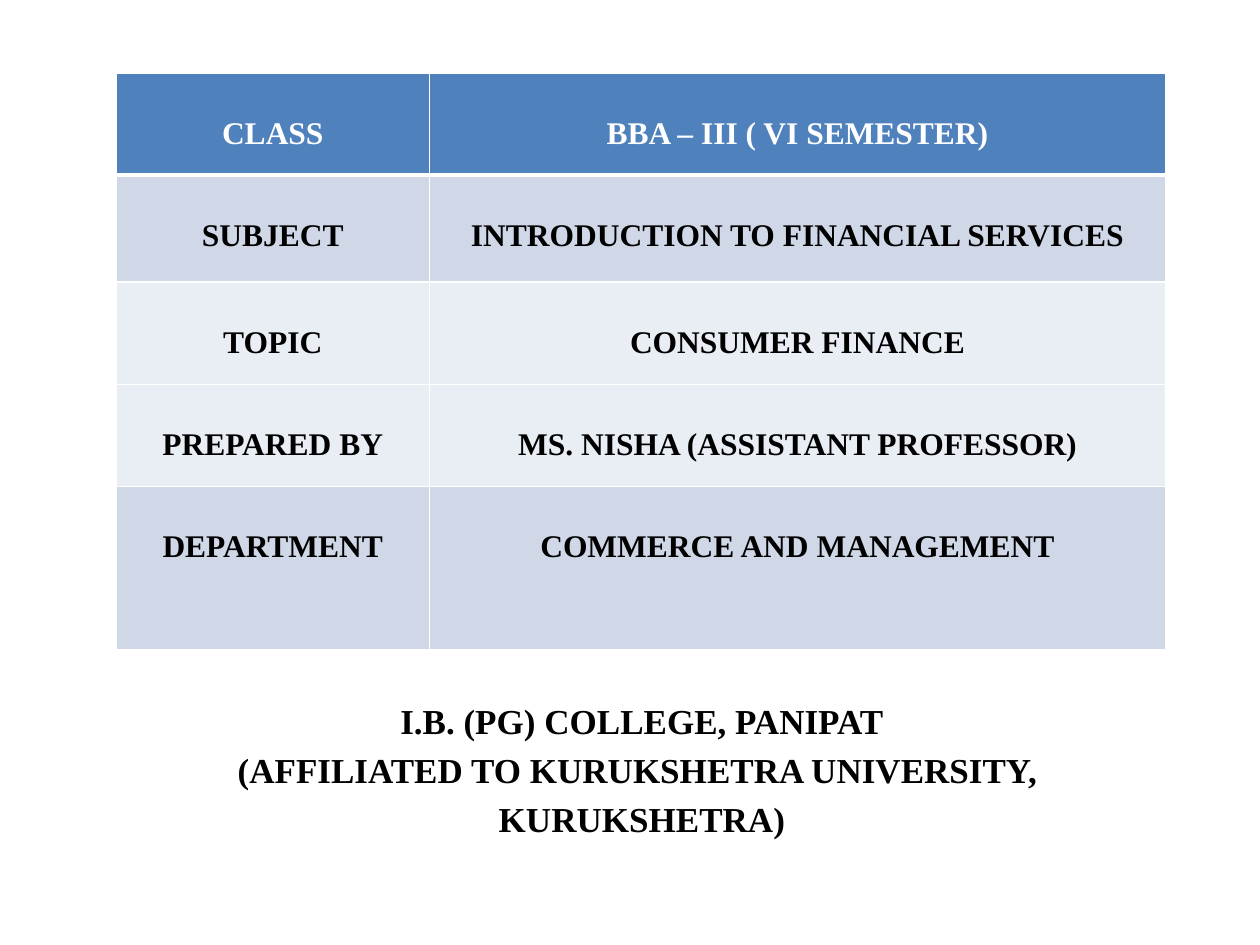
import lxml.etree
import pptx
import pptx.dml.color
import pptx.enum.text
import pptx.oxml.ns
import pptx.util

Inches = pptx.util.Inches
WHITE = "FFFFFF"
HEADER_FILL = "4F81BD"
DARK_BAND = "D0D8E8"
LIGHT_BAND = "E9EDF4"

COLUMN_WIDTHS = [2.49, 5.84]
DETAILS = [
    ("CLASS", "BBA – III ( VI SEMESTER)", 0.81, HEADER_FILL),
    ("SUBJECT", "INTRODUCTION TO FINANCIAL SERVICES", 0.85, DARK_BAND),
    ("TOPIC", "CONSUMER FINANCE", 0.81, LIGHT_BAND),
    ("PREPARED BY", "MS. NISHA (ASSISTANT PROFESSOR)", 0.81, LIGHT_BAND),
    ("DEPARTMENT", "COMMERCE AND MANAGEMENT", 1.3, DARK_BAND),
]
COLLEGE_LINES = [
    "I.B. (PG) COLLEGE, PANIPAT",
    "(AFFILIATED TO KURUKSHETRA UNIVERSITY, ",
    "KURUKSHETRA)",
]


def rgb(color):
    return pptx.dml.color.RGBColor.from_string(color)


def write_text(paragraph, text, size=18, color="000000", bold=True):
    paragraph.alignment = pptx.enum.text.PP_ALIGN.CENTER
    run = paragraph.add_run()
    run.text = text
    run.font.name = "Times New Roman"
    run.font.size = pptx.util.Pt(size)
    run.font.bold = bold
    run.font.color.rgb = rgb(color)


def add_border(cell, side, width, color=WHITE):
    qn = pptx.oxml.ns.qn
    properties = cell._tc.get_or_add_tcPr()
    line = lxml.etree.SubElement(properties, qn(f"a:ln{side}"), w=str(pptx.util.Pt(width)))
    fill = lxml.etree.SubElement(line, qn("a:solidFill"))
    lxml.etree.SubElement(fill, qn("a:srgbClr"), val=color)


def add_details_table(slide, left, top, width, height):
    frame = slide.shapes.add_table(
        len(DETAILS), len(COLUMN_WIDTHS), Inches(left), Inches(top), Inches(width), Inches(height)
    )
    table = frame.table
    for column, column_width in zip(table.columns, COLUMN_WIDTHS):
        column.width = Inches(column_width)
    for row_index, (label, value, row_height, fill) in enumerate(DETAILS):
        table.rows[row_index].height = Inches(row_height)
        for column_index, text in enumerate((label, value)):
            cell = table.cell(row_index, column_index)
            cell.margin_top = Inches(0.34)
            borders = {"L": 1, "R": 1, "T": 3 if row_index == 1 else 1, "B": 3 if row_index == 0 else 1}
            for side, border_width in borders.items():
                add_border(cell, side, border_width)
            cell.fill.solid()
            cell.fill.fore_color.rgb = rgb(fill)
            color = WHITE if row_index == 0 else "000000"
            write_text(cell.text_frame.paragraphs[0], text, color=color)


def place_college(subtitle, left, top, width, height):
    subtitle.left, subtitle.top = Inches(left), Inches(top)
    subtitle.width, subtitle.height = Inches(width), Inches(height)
    text_frame = subtitle.text_frame
    for index, line in enumerate(COLLEGE_LINES):
        paragraph = text_frame.add_paragraph() if index else text_frame.paragraphs[0]
        write_text(paragraph, line, size=20)


def main():
    presentation = pptx.Presentation()
    presentation.slide_width = Inches(10)
    presentation.slide_height = Inches(7.5)
    slide = presentation.slides.add_slide(presentation.slide_layouts[0])
    title = slide.shapes.title
    title.element.getparent().remove(title.element)
    place_college(slide.placeholders[1], 1.53, 5.5, 7.13, 1.5)
    add_details_table(slide, 0.92, 0.58, 8.33, 4.57)
    presentation.save("out.pptx")


if __name__ == "__main__":
    main()
